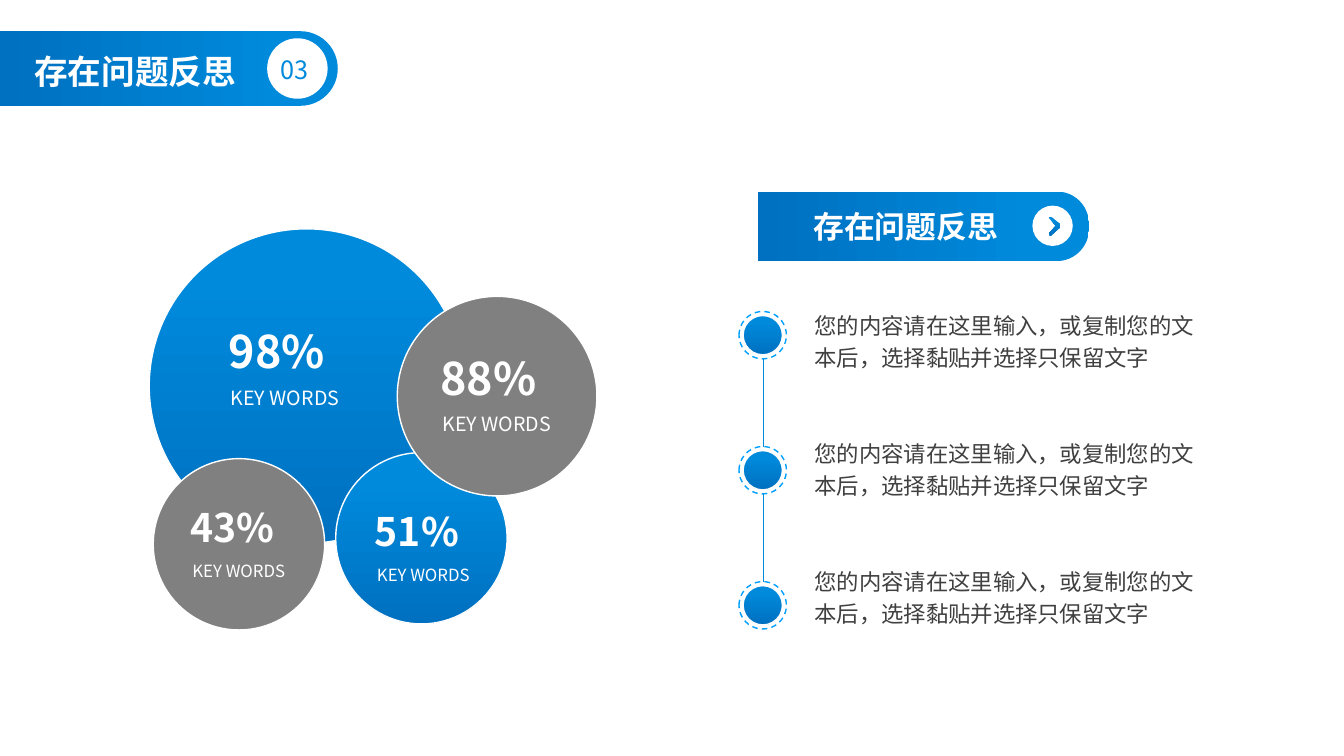
import pptx
import pptx.util
import pptx.dml.color
import pptx.enum.dml
import pptx.enum.shapes
import pptx.enum.text
from lxml import etree
from pptx.util import Inches, Pt

RGBColor = pptx.dml.color.RGBColor
Shape = pptx.enum.shapes.MSO_SHAPE
Align = pptx.enum.text.PP_ALIGN

WHITE = RGBColor(0xFF, 0xFF, 0xFF)
GRAY = RGBColor(0x80, 0x80, 0x80)
INK = RGBColor(0x40, 0x40, 0x40)
LIGHT_BLUE = RGBColor(0x00, 0x8A, 0xDC)
DARK_BLUE = RGBColor(0x00, 0x70, 0xC0)
RING_BLUE = RGBColor(0x00, 0xA0, 0xFE)
BLUE_GRADIENT = "blue gradient"
FONT = "Noto Sans CJK SC"
A = "{http://schemas.openxmlformats.org/drawingml/2006/main}"

HEADING = "存在问题反思"
BODY = "您的内容请在这里输入，或复制您的文本后，选择黏贴并选择只保留文字"


class SlideBuilder:
    """Holds the current slide and the blue house style."""

    def __init__(self, slide):
        self.slide = slide
        self.shapes = slide.shapes

    def paint(self, shape, fill, line=None, weight=1):
        shape.shadow.inherit = False
        if fill is None:
            shape.fill.background()
        elif fill == BLUE_GRADIENT:
            shape.fill.gradient()
            shape.fill.gradient_angle = 270
            stops = shape.fill.gradient_stops
            for stop, color, position in zip(stops, (LIGHT_BLUE, DARK_BLUE), (0.16, 1)):
                stop.color.rgb = color
                stop.position = position
        else:
            shape.fill.solid()
            shape.fill.fore_color.rgb = fill
        if line is None:
            shape.line.fill.background()
        else:
            shape.line.color.rgb = line
            shape.line.width = Pt(weight)

    def circle(self, left, top, diameter, fill, line=None):
        disc = self.shapes.add_shape(
            Shape.OVAL, Inches(left), Inches(top), Inches(diameter), Inches(diameter))
        self.paint(disc, fill, line)
        return disc

    def banner(self, left, top, width, height, rounding):
        """Add a bar whose right end is rounded; the box is as seen on the slide."""
        inset = (width - height) / 2
        bar = self.shapes.add_shape(
            Shape.ROUND_2_SAME_RECTANGLE, Inches(left + inset), Inches(top - inset),
            Inches(height), Inches(width))
        bar.rotation = 90
        bar.adjustments[0] = rounding
        bar.adjustments[1] = 0
        self.paint(bar, BLUE_GRADIENT)

    def set_text(self, box, text, size, color, bold=False, align=Align.LEFT, spacing=1.0):
        frame = box.text_frame
        frame.word_wrap = True
        frame.auto_size = pptx.enum.text.MSO_AUTO_SIZE.SHAPE_TO_FIT_TEXT
        frame.vertical_anchor = pptx.enum.text.MSO_ANCHOR.TOP
        frame.text = text
        paragraph = frame.paragraphs[0]
        paragraph.alignment = align
        paragraph.line_spacing = spacing
        font = paragraph.font
        font.size = Pt(size)
        font.bold = bold
        font.color.rgb = color
        font.name = FONT
        etree.SubElement(font._element, A + "ea", typeface=FONT)

    def text(self, left, top, width, height, *content, **style):
        box = self.shapes.add_textbox(
            Inches(left), Inches(top), Inches(width), Inches(height))
        self.set_text(box, *content, **style)

    def title(self, left, top, width, height, text, size, color):
        """Place the title placeholder above everything drawn so far."""
        heading = self.shapes.title
        heading.left, heading.top = Inches(left), Inches(top)
        heading.width, heading.height = Inches(width), Inches(height)
        self.set_text(heading, text, size, color, bold=True)
        self.shapes._spTree.append(heading._element)

    def vertical_line(self, x, top, bottom):
        line = self.shapes.add_connector(
            pptx.enum.shapes.MSO_CONNECTOR.STRAIGHT,
            Inches(x), Inches(top), Inches(x), Inches(bottom))
        line.line.color.rgb = LIGHT_BLUE
        line.line.width = Pt(0.5)
        etree.SubElement(line._element.spPr, A + "effectLst")

    def outline(self, points):
        corners = [(Inches(x), Inches(y)) for x, y in points]
        builder = self.shapes.build_freeform(*corners[0])
        builder.add_line_segments(corners[1:], close=True)
        self.paint(builder.convert_to_shape(), BLUE_GRADIENT)


def draw_header(page):
    page.banner(0, 0.31, 3.35, 0.74, 0.5)
    page.title(0.24, 0.45, 2.6, 0.52, HEADING, 24, WHITE)
    page.circle(2.65, 0.38, 0.6, WHITE)
    page.text(2.67, 0.49, 0.55, 0.4, "03 ", 18, LIGHT_BLUE, align=Align.CENTER)


def draw_bubbles(page):
    for left, top, diameter, fill in (
            (1.48, 2.27, 3.12, BLUE_GRADIENT), (1.52, 4.55, 1.7, GRAY),
            (3.33, 4.49, 1.7, BLUE_GRADIENT), (3.94, 2.94, 1.98, GRAY)):
        page.circle(left, top, diameter, fill, WHITE)
    for percent, left, top, size, label_size, label_drop in (
            ("98%", 2.17, 3.16, 32, 14, 0.56), ("88%", 4.27, 3.43, 32, 14, 0.55),
            ("51%", 3.62, 4.98, 28, 12, 0.52), ("43%", 1.79, 4.94, 28, 12, 0.52)):
        page.text(left, top, 1.55, size / 50, percent, size, WHITE, bold=True)
        page.text(left + 0.02, top + label_drop, 1.65, 0.36,
                  "KEY WORDS", label_size, WHITE, spacing=1.25)


def draw_timeline(page):
    ring_top, ring_step, ring_size = 3.09, 1.34, 0.47
    for step in range(3):
        top = ring_top + step * ring_step
        page.circle(7.37, top + 0.04, 0.39, BLUE_GRADIENT, WHITE)
        ring = page.circle(7.33, top, ring_size, None, RING_BLUE)
        ring.line.dash_style = pptx.enum.dml.MSO_LINE.DASH
        if step < 2:
            page.vertical_line(7.57, top + ring_size, top + ring_step)
        page.text(7.98, 2.99 + step * 1.27, 3.97, 0.73, BODY, 16, INK, spacing=1.2)


def draw_section_banner(page):
    page.banner(7.52, 1.9, 3.28, 0.69, 0.46)
    page.text(7.97, 2.01, 2.6, 0.47, HEADING, 22, WHITE, bold=True)
    page.circle(10.24, 2.04, 0.4, WHITE)
    page.outline([
        (10.41, 2.33), (10.42, 2.34), (10.44, 2.32), (10.52, 2.25), (10.52, 2.23),
        (10.44, 2.16), (10.42, 2.15), (10.41, 2.15), (10.4, 2.16), (10.41, 2.17),
        (10.47, 2.24), (10.41, 2.31), (10.4, 2.32)])


def main():
    deck = pptx.Presentation()
    deck.slide_width, deck.slide_height = Inches(13.33), Inches(7.5)
    page = SlideBuilder(deck.slides.add_slide(deck.slide_layouts[5]))
    draw_header(page)
    draw_bubbles(page)
    draw_timeline(page)
    draw_section_banner(page)
    deck.save("out.pptx")


if __name__ == "__main__":
    main()
